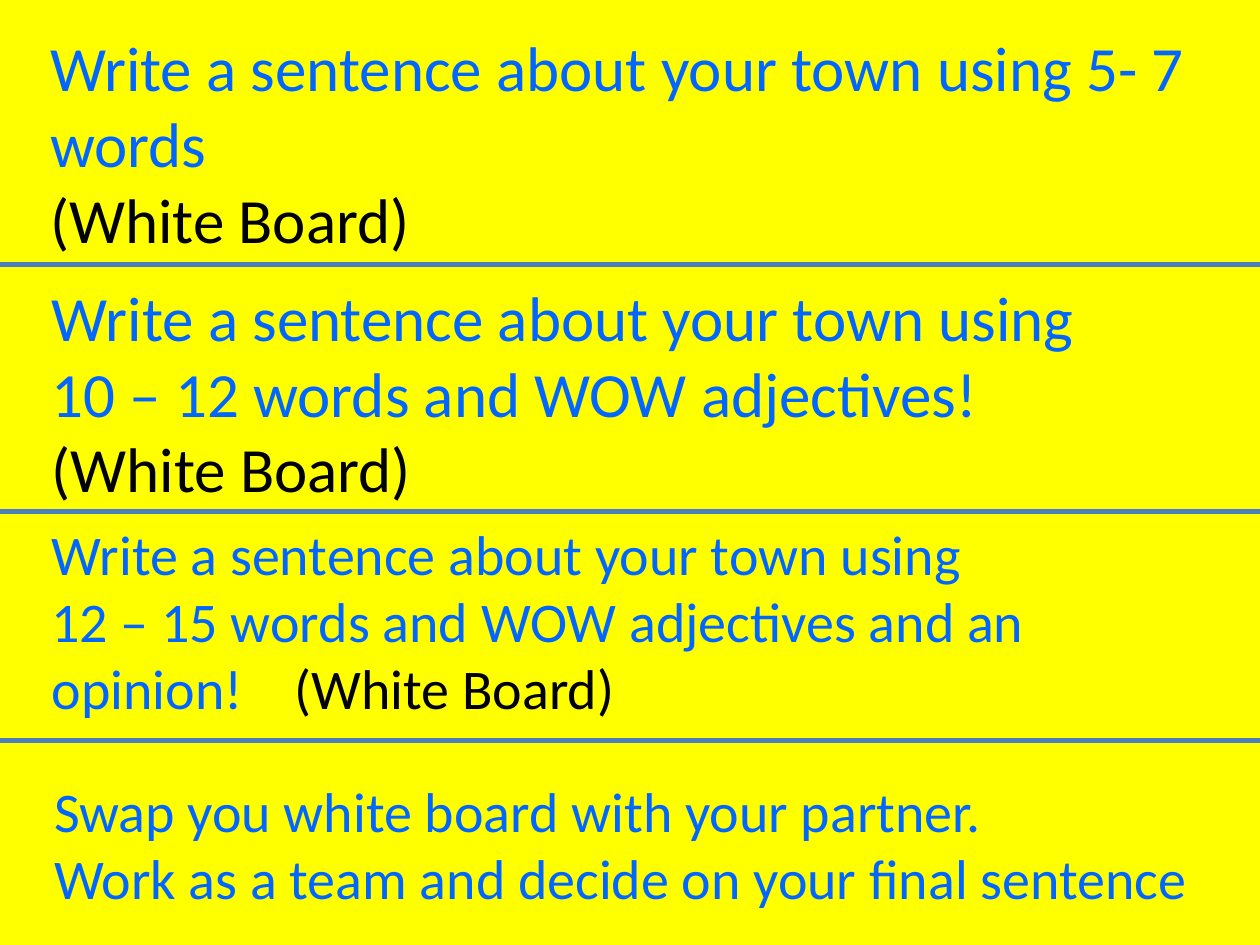
from lxml.etree import SubElement
from pptx import Presentation
from pptx.dml.color import RGBColor
from pptx.enum.shapes import MSO_CONNECTOR
from pptx.enum.text import MSO_AUTO_SIZE
from pptx.oxml.ns import qn
from pptx.util import Cm, Pt

YELLOW, BLUE, BLACK, RULE = "FFFF00", "0066FF", "000000", "4B7EBC"
WHITE_BOARD = ("(White Board)", BLACK)
SENTENCE = "Write a sentence about your town using"


def color(value):
    return RGBColor.from_string(value)


def apply_format(target, values):
    for name, value in values.items():
        setattr(target, name, value)


def add_tab_stop(paragraph, position):
    tab_list = SubElement(paragraph._p.get_or_add_pPr(), qn("a:tabLst"))
    SubElement(tab_list, qn("a:tab"), pos=str(position), algn="l")


def add_task(slide, box, size, paragraphs, wrap=True):
    text_frame = slide.shapes.add_textbox(*map(Cm, box)).text_frame
    apply_format(text_frame, {"word_wrap": wrap, "auto_size": MSO_AUTO_SIZE.SHAPE_TO_FIT_TEXT})
    for index, runs in enumerate(paragraphs):
        paragraph = text_frame.add_paragraph() if index else text_frame.paragraphs[0]
        if any("\t" in text for text, _ in runs):
            add_tab_stop(paragraph, Cm(4.9))
        for text, hex_color in runs:
            run = paragraph.add_run()
            run.text = text
            apply_format(run.font, {"name": "Calibri", "size": Pt(size)})
            run.font.color.rgb = color(hex_color)


def add_divider(slide, left, top):
    line = slide.shapes.add_connector(
        MSO_CONNECTOR.STRAIGHT, Cm(left), Cm(top), Cm(left + 25.7), Cm(top))
    line.line.color.rgb = color(RULE)
    line.line.width = Pt(3)
    SubElement(line._element.spPr, qn("a:effectLst"))


def main():
    presentation = Presentation()
    apply_format(presentation, {"slide_width": Cm(25.4), "slide_height": Cm(19.05)})
    slide = presentation.slides.add_slide(presentation.slide_layouts[6])
    fill = slide.background.fill
    fill.solid()
    fill.fore_color.rgb = color(YELLOW)

    add_task(slide, (0.76, 0.46, 23.93, 4.88), 36,
             [[(f"{SENTENCE} 5- 7 words", BLUE)], [WHITE_BOARD]])
    for left, top in ((0, 5.33), (-0.3, 10.31), (0, 14.93)):
        add_divider(slide, left, top)
    add_task(slide, (0.79, 5.49, 21.59, 4.88), 36,
             [[(SENTENCE, BLUE)],
              [("10 – 12 words and WOW adjectives!", BLUE)],
              [WHITE_BOARD]], wrap=False)
    add_task(slide, (0.79, 10.34, 23.55, 4.37), 32,
             [[(SENTENCE, BLUE)],
              [("12 – 15 words and WOW adjectives and an opinion!\t", BLUE), WHITE_BOARD]])
    add_task(slide, (0.84, 15.52, 23.85, 3), 32,
             [[("Swap you white board with your partner.", BLUE)],
              [("Work as a team and decide on your final sentence", BLUE)]], wrap=False)
    presentation.save("out.pptx")


if __name__ == "__main__":
    main()
